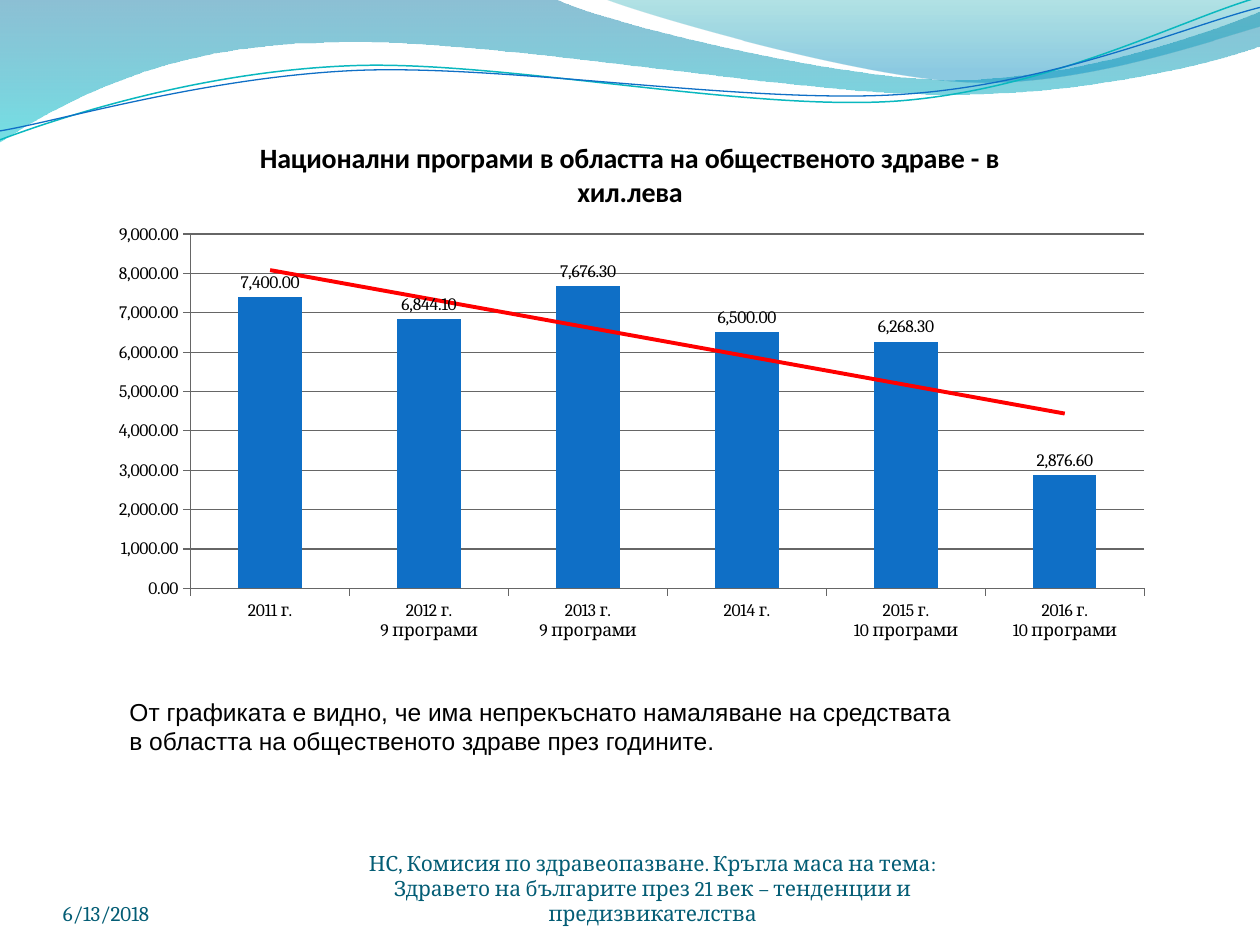
import pptx
import pptx.chart.data
import pptx.dml.color
import pptx.enum.chart
import pptx.enum.text
import pptx.oxml
import pptx.oxml.ns
import pptx.util
from dataclasses import dataclass

Cm = pptx.util.Cm
Pt = pptx.util.Pt
qn = pptx.oxml.ns.qn
chart_enum = pptx.enum.chart
text_enum = pptx.enum.text


@dataclass(frozen=True)
class Theme:
    ink: str = "000000"
    blue: str = "0F6FC6"
    teal: str = "0AB8BF"
    trend: str = "FF0000"
    grid: str = "666666"
    foot: str = "045D75"
    head_font: str = "Calibri"
    body_font: str = "Arial"
    data_font: str = "Cambria"
    head_size: int = 16
    body_size: int = 14
    foot_size: int = 12
    data_size: int = 10
    # Gradient stops: position, colour, opacity in percent
    deep: tuple = ((0, "0074A1", 45), (1, "00C6CF", 55))
    pale: tuple = ((0, "00A1A9", 30), (0.8, "008BBF", 45))


THEME = Theme()

# Wave outlines in cm: a pair is a straight step, six numbers are a Bezier step.
BROAD = [(0, -0.03), (11.18, -0.03),
         (12.09, 0.43, 16.87, 1.6, 19.25, 1.6),
         (21.67, 1.6, 24.33, 0.66, 25.4, 0.23), (25.43, 0.91),
         (24.97, 1.12, 22.1, 1.93, 18.95, 1.9),
         (15.8, 1.9, 9.7, 0.71, 6.53, 0.86),
         (3.28, 0.89, 1.17, 2.11, -0.03, 2.87)]
SMALL = [(12.17, -0.03),
         (12.93, 0.28, 17.32, 1.57, 19.53, 1.65),
         (21.74, 1.75, 24.41, 0.81, 25.4, 0.53), (25.4, 0)]
# These two are level; the shapes are turned by TILT.
UPPER = [(-0.05, 2.22),
         (1.19, 1.82, 4.02, 1.04, 7.05, 1.06),
         (10.05, 1.07, 15.02, 2.37, 18.08, 2.29),
         (21.13, 2.2, 23.87, 0.91, 25.41, 0.55)]
LOWER = [(-0.04, 2.04),
         (1.16, 1.9, 4.18, 1.15, 7.2, 1.16),
         (10.25, 1.18, 15.13, 2.23, 18.18, 2.16),
         (21.21, 2.1, 23.93, 1.06, 25.45, 0.75)]
TILT = 357.3

FUNDS = [("2011 г.", 7400), ("2012 г.\n9 програми", 6844.1),
         ("2013 г.\n9 програми", 7676.3), ("2014 г.", 6500),
         ("2015 г.\n10 програми", 6268.3), ("2016 г.\n10 програми", 2876.6)]


def rgb(code):
    return pptx.dml.color.RGBColor.from_string(code)


def style(font, name, size, color, bold=False):
    font.name, font.size, font.bold = name, Pt(size), bold
    font.color.rgb = rgb(color)


def draw(shapes, box, steps, close):
    """Build an outline through all points, then join each Bezier step's three."""
    points = [(Cm(box[0] + x), Cm(box[1] + y))
              for step in steps for x, y in zip(step[::2], step[1::2])]
    pen = shapes.build_freeform(*points[0], scale=1.0)
    pen.add_line_segments(points[1:], close=close)
    shape = pen.convert_to_shape()
    shape.shadow.inherit = False
    lines = iter(list(shape.element.iter(qn("a:lnTo"))))
    for step in steps[1:]:
        first = next(lines)
        if len(step) == 6:
            curve = pptx.oxml.parse_xml(
                f'<a:cubicBezTo {pptx.oxml.ns.nsdecls("a")}/>')
            first.addprevious(curve)
            for line in (first, next(lines), next(lines)):
                curve.append(line[0])
                line.getparent().remove(line)
    return shape


def add_waves(slide, box):
    for steps, stops in ((BROAD, THEME.deep), (SMALL, THEME.pale)):
        wave = draw(slide.shapes, box, steps, True)
        wave.line.fill.background()
        wave.fill.gradient()
        wave.fill.gradient_angle = 270
        for stop, (place, color, alpha) in zip(wave.fill.gradient_stops, stops):
            stop.position = place
            stop.color.rgb = rgb(color)
        for node, (place, color, alpha) in zip(
                wave.element.iter(qn("a:srgbClr")), stops):
            node.append(pptx.oxml.parse_xml(
                f'<a:alpha {pptx.oxml.ns.nsdecls("a")} val="{alpha * 1000}"/>'))
    group = slide.shapes.add_group_shape()
    for steps, color, width in ((UPPER, THEME.teal, 0.85), (LOWER, THEME.blue, 0.75)):
        curve = draw(group.shapes, box, steps, False)
        curve.rotation = TILT
        curve.fill.background()
        curve.line.color.rgb = rgb(color)
        curve.line.width = Pt(width)


def add_trend(series):
    node = pptx.oxml.parse_xml(
        f'<c:trendline {pptx.oxml.ns.nsdecls("c", "a")}>'
        f'<c:spPr><a:ln w="{Pt(2.25)}"><a:solidFill><a:srgbClr val="{THEME.trend}"/>'
        '</a:solidFill></a:ln></c:spPr><c:trendlineType val="linear"/>'
        '<c:dispRSqr val="0"/><c:dispEq val="0"/></c:trendline>')
    series._element.find(qn("c:cat")).addprevious(node)


def set_plot(plot, area):
    """Fix the inner plot area, given as shares of the chart."""
    tree = plot._element.getparent()
    for old in tree.findall(qn("c:layout")):
        tree.remove(old)
    sizes = "".join(f'<c:{key} val="{share}"/>' for key, share in zip("xywh", area))
    tree.insert(0, pptx.oxml.parse_xml(
        f'<c:layout {pptx.oxml.ns.nsdecls("c")}><c:manualLayout>'
        '<c:layoutTarget val="inner"/><c:xMode val="edge"/><c:yMode val="edge"/>'
        f'{sizes}</c:manualLayout></c:layout>'))


def add_graph(slide, box):
    data = pptx.chart.data.CategoryChartData(number_format="#,##0.00")
    data.categories = [name for name, value in FUNDS]
    data.add_series("Series 1", [value for name, value in FUNDS])
    chart = slide.shapes.add_chart(
        chart_enum.XL_CHART_TYPE.COLUMN_CLUSTERED, *map(Cm, box), data).chart
    style(chart.font, THEME.data_font, THEME.data_size, THEME.ink)
    chart.has_legend = False
    chart.has_title = True
    title = chart.chart_title
    title.include_in_layout = False
    title.text_frame.text = "Национални програми в областта на общественото здраве - в хил.лева"
    style(title.text_frame.paragraphs[0].runs[0].font,
          THEME.head_font, THEME.head_size, THEME.ink, True)

    for axis in (chart.category_axis, chart.value_axis):
        axis.major_tick_mark = chart_enum.XL_TICK_MARK.OUTSIDE
        axis.minor_tick_mark = chart_enum.XL_TICK_MARK.NONE
        axis.format.line.color.rgb = rgb(THEME.grid)
    scale = chart.value_axis
    scale.has_major_gridlines = True
    scale.major_gridlines.format.line.color.rgb = rgb(THEME.grid)

    plot = chart.plots[0]
    set_plot(plot, (0.09, 0.22, 0.89, 0.66))
    plot.gap_width = 150
    plot.vary_by_categories = False
    series = plot.series[0]
    series.format.fill.solid()
    series.format.fill.fore_color.rgb = rgb(THEME.blue)
    labels = series.data_labels
    labels.show_value = True
    labels.position = chart_enum.XL_LABEL_POSITION.OUTSIDE_END
    for item in (scale.tick_labels, labels):
        item.number_format = "#,##0.00"
        item.number_format_is_linked = False
    add_trend(series)


def add_text(slide, box, text, look):
    frame = slide.shapes.add_textbox(*map(Cm, box)).text_frame
    frame.word_wrap = True
    frame.text = text
    for line in frame.paragraphs:
        style(line.runs[0].font, *look)
    return frame


def add_foot(slide, box):
    """Place the date at the left and the event in the middle."""
    left, top, width, height = box
    align = text_enum.PP_ALIGN
    for shift, span, text, side in (
            (6.15, 11.48, "НС, Комисия по здравеопазване. Кръгла маса на тема: "
             "Здравето на българите през 21 век – тенденции и предизвикателства",
             align.CENTER),
            (0, 5.92, "6/13/2018", align.LEFT)):
        frame = add_text(slide, (left + shift, top, span, height), text,
                         (THEME.data_font, THEME.foot_size, THEME.foot))
        frame.margin_left = frame.margin_right = 0
        frame.margin_top = frame.margin_bottom = 0
        frame.vertical_anchor = text_enum.MSO_ANCHOR.BOTTOM
        frame.paragraphs[0].alignment = side


def main():
    deck = pptx.Presentation()
    deck.slide_width, deck.slide_height = Cm(25.4), Cm(19.05)
    slide = deck.slides.add_slide(deck.slide_layouts[6])
    add_waves(slide, (0, 0))
    add_text(slide, (2.36, 13.92, 20.8, 1.45),
             "От графиката е видно, че има непрекъснато намаляване на средствата\n"
             "в областта на общественото здраве през годините.",
             (THEME.body_font, THEME.body_size, THEME.ink))
    add_graph(slide, (1.9, 2.34, 21.6, 10.82))
    add_foot(slide, (1.27, 17.65, 22.86, 1.02))
    deck.save("out.pptx")


if __name__ == "__main__":
    main()
